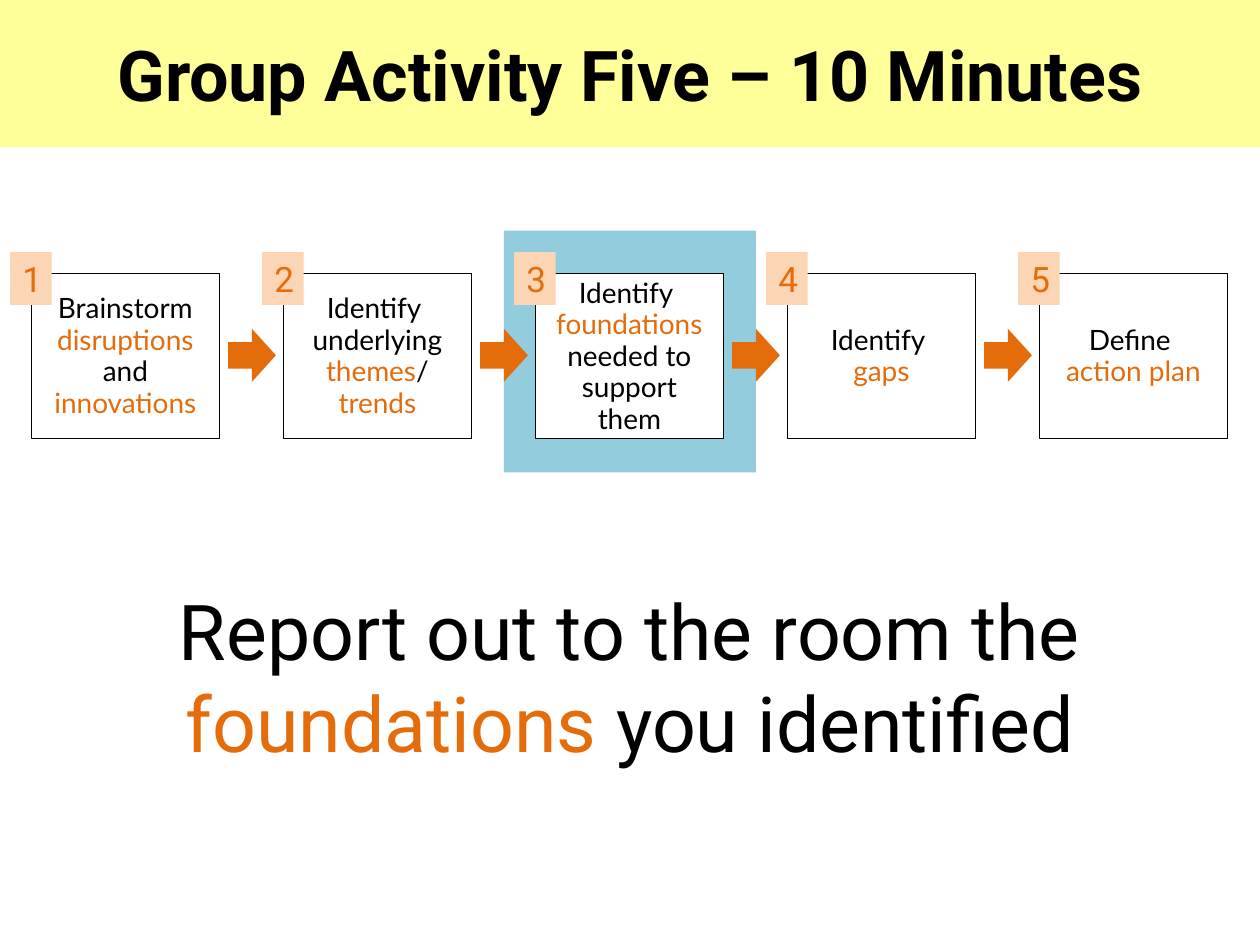
from dataclasses import dataclass

from pptx import Presentation
from pptx.dml.color import RGBColor
from pptx.enum.shapes import MSO_SHAPE
from pptx.enum.text import MSO_ANCHOR, MSO_AUTO_SIZE, PP_ALIGN
from pptx.util import Inches, Pt


@dataclass(frozen=True)
class Theme:
    black: str = "000000"
    white: str = "FFFFFF"
    accent: str = "E46C0A"
    badge: str = "FCD5B5"
    banner: str = "FFFF99"
    highlight: str = "93CDDD"
    heading_font: str = "Roboto"
    step_font: str = "Lato"
    title_size: int = 40
    message_size: int = 44
    step_size: int = 16
    step_spacing: int = 18
    badge_size: int = 20


THEME = Theme()
PITCH = 2.0
CURRENT_STEP = 3

# Each step is a list of lines; text between asterisks is accented
STEPS = [
    ["Brainstorm *disruptions* and *innovations*"],
    ["Identify ", "underlying* themes*/ *trends*"],
    ["Identify ", "*foundations* needed to support them"],
    ["Identify ", "*gaps*"],
    ["Define ", "*action plan*"],
]


def add_block(s, kind, x, y, w, h, fill, line=None):
    """Add a flat preset shape."""
    sp = s.shapes.add_shape(kind, Inches(x), Inches(y), Inches(w), Inches(h))
    sp.shadow.inherit = False
    sp.fill.solid()
    sp.fill.fore_color.rgb = RGBColor.from_string(fill)
    if line:
        sp.line.color.rgb = RGBColor.from_string(line)
        sp.line.width = Pt(0.75)
    else:
        sp.line.fill.background()
    return sp


def write(sp, lines, font, size, color=THEME.black, bold=False):
    """Fill a shape with one centred paragraph, accenting *marked* text."""
    tf = sp.text_frame
    tf.word_wrap = True
    p = tf.paragraphs[0]
    p.alignment = PP_ALIGN.CENTER
    p.font.name = font
    p.font.size = Pt(size)
    p.font.bold = bold
    for i, line in enumerate(lines):
        if i:
            p.add_line_break()
        for j, part in enumerate(line.split("*")):
            if part:
                r = p.add_run()
                r.text = part
                shade = THEME.accent if j % 2 else color
                r.font.color.rgb = RGBColor.from_string(shade)
    return p


def add_title(s, text):
    sp = add_block(s, MSO_SHAPE.RECTANGLE, 0, 0, 10, 1.17, THEME.banner)
    sp.text_frame.vertical_anchor = MSO_ANCHOR.MIDDLE
    write(sp, [text], THEME.heading_font, THEME.title_size, bold=True)


def add_message(s, text):
    sp = s.shapes.add_textbox(Inches(0.5), Inches(4.58), Inches(9), Inches(1.58))
    write(sp, [text], THEME.heading_font, THEME.message_size)
    sp.text_frame.auto_size = MSO_AUTO_SIZE.SHAPE_TO_FIT_TEXT


def add_highlight(s, step):
    add_block(s, MSO_SHAPE.RECTANGLE, (step - 1) * PITCH, 1.83, PITCH, 1.92,
              THEME.highlight)


def add_step(s, number, lines):
    """Add a step box with its number badge."""
    x = (number - 1) * PITCH
    box = add_block(s, MSO_SHAPE.RECTANGLE, x + 0.25, 2.17, 1.49, 1.31,
                    THEME.white, THEME.black)
    box.text_frame.vertical_anchor = MSO_ANCHOR.MIDDLE
    p = write(box, lines, THEME.step_font, THEME.step_size)
    p.line_spacing = Pt(THEME.step_spacing)

    badge = add_block(s, MSO_SHAPE.RECTANGLE, x + 0.08, 2, 0.33, 0.42, THEME.badge)
    badge.text_frame.vertical_anchor = MSO_ANCHOR.MIDDLE
    write(badge, [str(number)], THEME.heading_font, THEME.badge_size, THEME.accent)


def add_arrow(s, after_step):
    add_block(s, MSO_SHAPE.RIGHT_ARROW, (after_step - 1) * PITCH + 1.81, 2.61,
              0.38, 0.42, THEME.accent)


def main():
    prs = Presentation()
    prs.slide_width, prs.slide_height = Inches(10), Inches(7.5)
    s = prs.slides.add_slide(prs.slide_layouts[6])

    # Background panel, message and title
    add_highlight(s, CURRENT_STEP)
    add_message(s, "Report out to the room the *foundations* you identified")
    add_title(s, "Group Activity Five – 10 Minutes")

    # Process row
    for number, lines in enumerate(STEPS, start=1):
        add_step(s, number, lines)
        if number < len(STEPS):
            add_arrow(s, number)

    prs.save("out.pptx")


if __name__ == "__main__":
    main()
